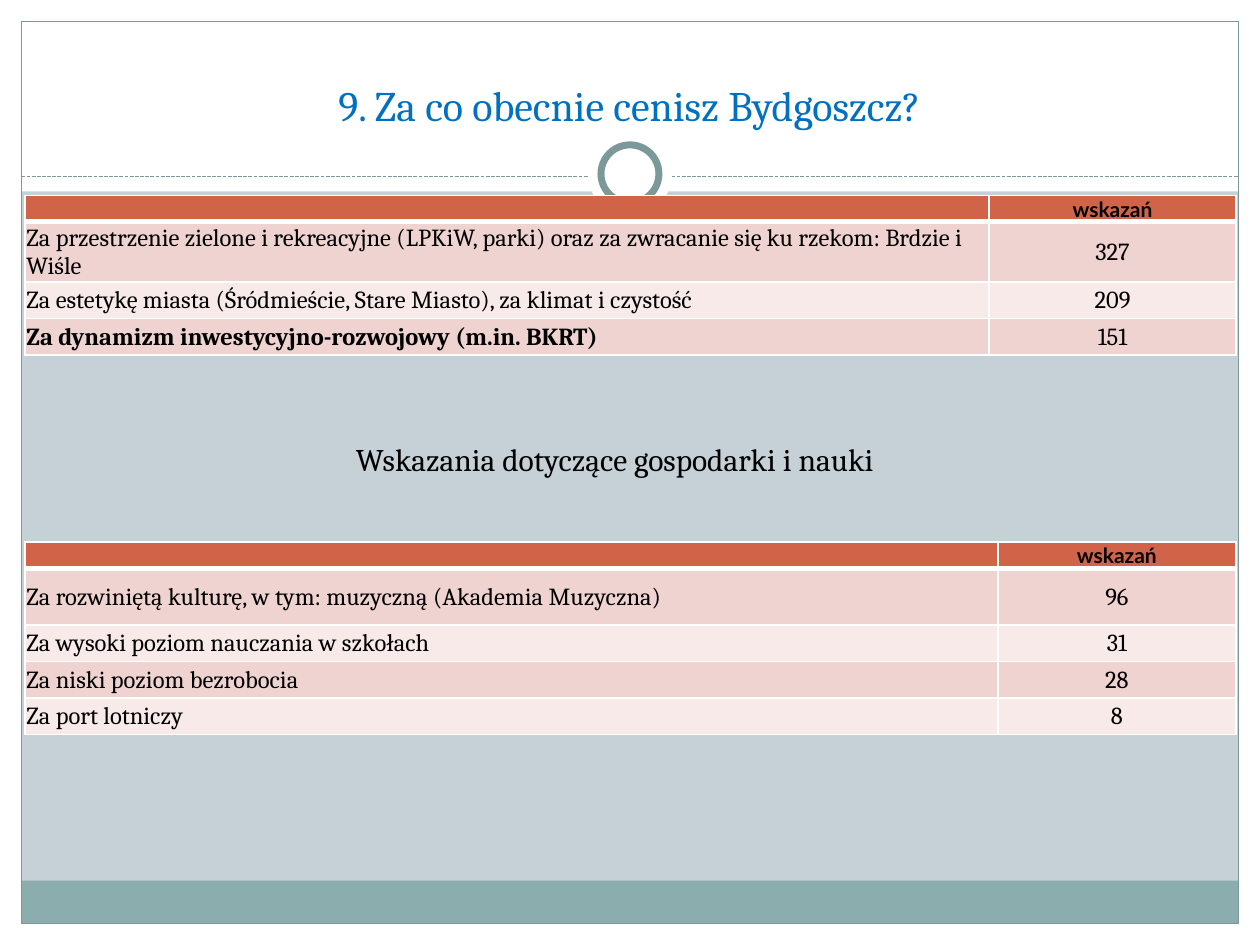
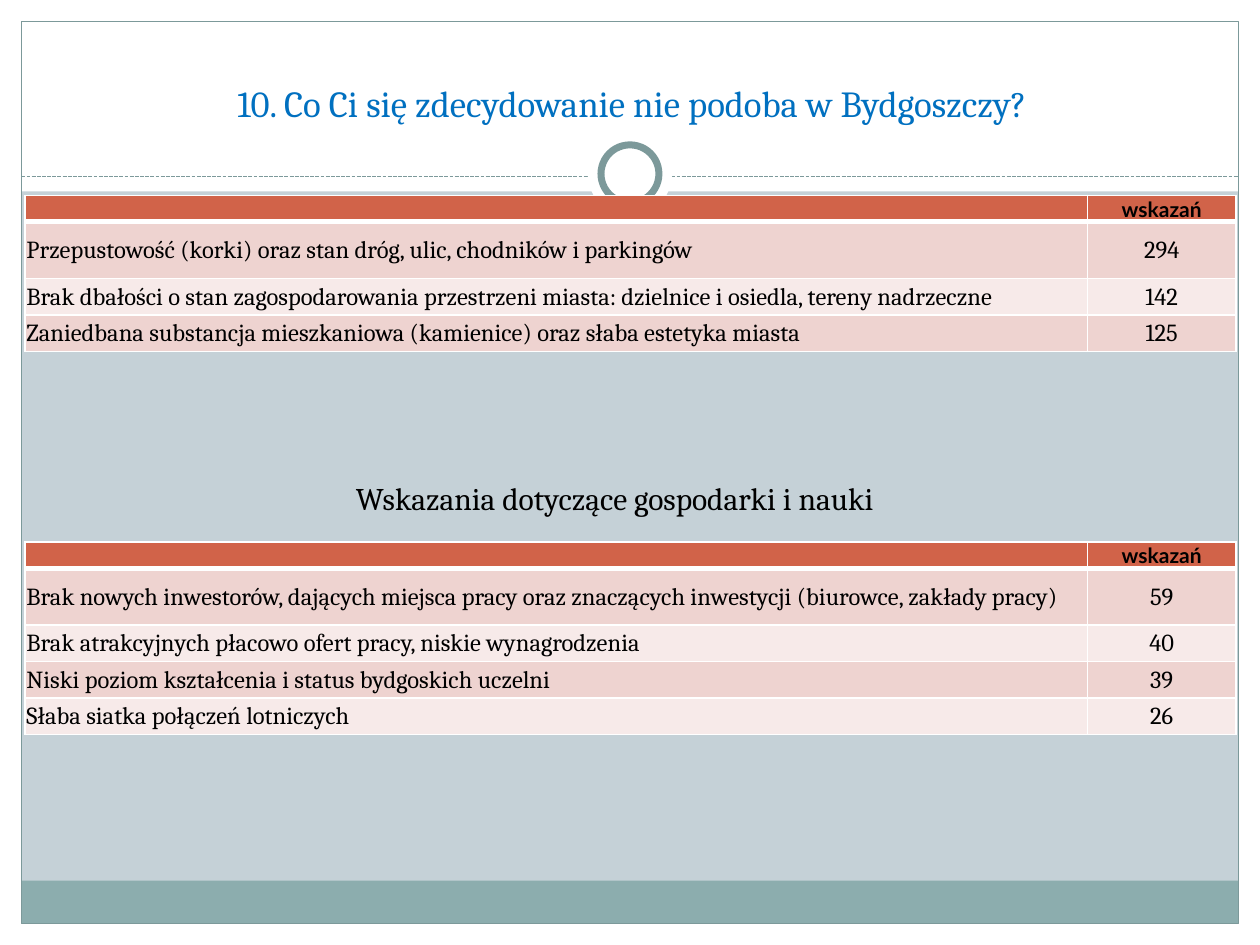
from dataclasses import dataclass

import pptx
import pptx.dml.color
import pptx.enum.dml
import pptx.enum.shapes
import pptx.enum.text
import pptx.oxml
import pptx.oxml.ns
import pptx.util
from pptx.shapes.autoshape import Shape
from pptx.slide import Slide
from pptx.table import _Cell

SHAPE = pptx.enum.shapes.MSO_SHAPE
ANCHOR = pptx.enum.text.MSO_ANCHOR
ALIGN = pptx.enum.text.PP_ALIGN

# The slide is a grid of 100 columns by 75 rows.
CELL = pptx.util.Inches(0.1)
COLUMNS, ROWS = 100, 75
MARGIN = 1.7
HEADER_BAND = 15.2
DIVIDER_ROW = 14
FOOTER_ROWS = 3.4
TABLE_LEFT, TABLE_WIDTH = 2, 96.1
HEADING_ROW, FIRST_ROW, OTHER_ROW = 2.1, 4.5, 2.9


@dataclass(frozen=True)
class Theme:
    background: str = "C5D1D7"
    paper: str = "FFFFFF"
    frame: str = "7C999A"
    footer: str = "8CADAE"
    title: str = "0070C0"
    text: str = "000000"
    heading_fill: str = "D16349"
    bands: tuple[str, str] = ("EED3D0", "F7EAE9")
    serif: str = "Cambria"
    sans: str = "Lato"
    caption_size: int = 18
    answer_size: int = 14
    heading_size: int = 12
    hairline: float = 0.75
    ring_line: float = 4
    cell_line: float = 1
    heading_line: float = 3


THEME = Theme()


@dataclass(frozen=True)
class Area:
    left: float
    top: float
    width: float
    height: float

    def lengths(self) -> tuple[int, ...]:
        return tuple(grid(n) for n in (self.left, self.top, self.width, self.height))


@dataclass(frozen=True)
class Decoration:
    area: Area
    kind: int = SHAPE.RECTANGLE
    fill: str | None = THEME.paper
    line_width: float = 0


@dataclass(frozen=True)
class Answer:
    label: str
    votes: int
    bold: bool = False


@dataclass(frozen=True)
class Ranking:
    top: float
    label_width: float
    answers: tuple[Answer, ...]


@dataclass(frozen=True)
class Question:
    title: str
    title_area: Area
    title_size: int
    caption_top: float
    rankings: tuple[Ranking, Ranking]


def circle(diameter: float, middle: float = 13.8) -> Area:
    return Area((COLUMNS - diameter) / 2, middle - diameter / 2, diameter, diameter)


INNER_WIDTH = COLUMNS - 2 * MARGIN
BANDS = (
    Decoration(Area(0, ROWS - MARGIN, COLUMNS, MARGIN)),
    Decoration(Area(0, 0, COLUMNS, HEADER_BAND)),
    Decoration(Area(0, 0, MARGIN, ROWS)),
    Decoration(Area(COLUMNS - MARGIN, 0, MARGIN, ROWS)),
    Decoration(Area(MARGIN, ROWS - MARGIN - FOOTER_ROWS, INNER_WIDTH, FOOTER_ROWS),
               fill=THEME.footer),
    Decoration(Area(MARGIN, MARGIN, INNER_WIDTH, ROWS - 2 * MARGIN),
               fill=None, line_width=THEME.hairline),
)
RINGS = (
    Decoration(circle(6.7), SHAPE.OVAL),
    Decoration(circle(4.6), SHAPE.OVAL, line_width=THEME.ring_line),
)

QUESTIONS = (
    Question(
        "9. Za co obecnie cenisz Bydgoszcz?", Area(3.3, 2.5, 93.3, 8.3), 24, 34.4,
        (
            Ranking(15.5, 76.5, (
                Answer("Za przestrzenie zielone i rekreacyjne (LPKiW, parki) "
                       "oraz za zwracanie się ku rzekom: Brdzie i Wiśle", 327),
                Answer("Za estetykę miasta (Śródmieście, Stare Miasto), "
                       "za klimat i czystość", 209),
                Answer("Za dynamizm inwestycyjno-rozwojowy (m.in. BKRT)", 151, bold=True),
            )),
            Ranking(43, 77.2, (
                Answer("Za rozwiniętą kulturę, w tym: muzyczną (Akademia Muzyczna)", 96),
                Answer("Za wysoki poziom nauczania w szkołach", 31),
                Answer("Za niski poziom bezrobocia", 28),
                Answer("Za port lotniczy", 8),
            )),
        ),
    ),
    Question(
        "10. Co Ci się zdecydowanie nie podoba w Bydgoszczy?",
        Area(2.3, 2.9, 95.7, 7.5), 21, 37.5,
        (
            Ranking(15.5, 84.3, (
                Answer("Przepustowość (korki) oraz stan dróg, ulic, "
                       "chodników i parkingów", 294),
                Answer("Brak dbałości o stan zagospodarowania przestrzeni miasta: "
                       "dzielnice i osiedla, tereny nadrzeczne", 142),
                Answer("Zaniedbana substancja mieszkaniowa (kamienice) "
                       "oraz słaba estetyka miasta", 125),
            )),
            Ranking(43, 84.3, (
                Answer("Brak nowych inwestorów, dających miejsca pracy oraz "
                       "znaczących inwestycji (biurowce, zakłady pracy)", 59),
                Answer("Brak atrakcyjnych płacowo ofert pracy, niskie wynagrodzenia", 40),
                Answer("Niski poziom kształcenia i status bydgoskich uczelni", 39),
                Answer("Słaba siatka połączeń lotniczych", 26),
            )),
        ),
    ),
)


def grid(count: float) -> int:
    return round(count * CELL)


def rgb(value: str) -> pptx.dml.color.RGBColor:
    return pptx.dml.color.RGBColor.from_string(value)


def decorate(slide: Slide, decoration: Decoration) -> None:
    shape = slide.shapes.add_shape(decoration.kind, *decoration.area.lengths())
    shape.shadow.inherit = False
    if decoration.fill:
        shape.fill.solid()
        shape.fill.fore_color.rgb = rgb(decoration.fill)
    else:
        shape.fill.background()
    if decoration.line_width:
        shape.line.color.rgb = rgb(THEME.frame)
        shape.line.width = pptx.util.Pt(decoration.line_width)
    else:
        shape.line.fill.background()


def add_divider(slide: Slide) -> None:
    divider = slide.shapes.add_connector(
        pptx.enum.shapes.MSO_CONNECTOR.STRAIGHT, grid(MARGIN), grid(DIVIDER_ROW),
        grid(COLUMNS - MARGIN), grid(DIVIDER_ROW))
    divider.line.color.rgb = rgb(THEME.frame)
    divider.line.width = pptx.util.Pt(THEME.hairline)
    divider.line.dash_style = pptx.enum.dml.MSO_LINE.SQUARE_DOT
    properties = divider._element.spPr
    properties.append(pptx.oxml.parse_xml(
        f"<a:effectLst {pptx.oxml.ns.nsdecls('a')}/>"))


def style_run(run, size: float, color: str, font: str = THEME.serif,
              bold: bool = False) -> None:
    run.font.size = pptx.util.Pt(size)
    run.font.name = font
    run.font.bold = bold
    run.font.color.rgb = rgb(color)


def add_centred_text(slide: Slide, text: str, area: Area, size: float,
                     color: str) -> Shape:
    box = slide.shapes.add_textbox(*area.lengths())
    box.text_frame.word_wrap = True
    box.text_frame.text = text
    paragraph = box.text_frame.paragraphs[0]
    paragraph.alignment = ALIGN.CENTER
    style_run(paragraph.runs[0], size, color)
    return box


def border_cell(cell: _Cell, top: float, bottom: float) -> None:
    """Rule all four sides; the borders must precede the fill in the XML."""
    widths = {"L": THEME.cell_line, "R": THEME.cell_line, "T": top, "B": bottom}
    properties = cell._tc.get_or_add_tcPr()
    for position, (side, width) in enumerate(widths.items()):
        properties.insert(position, pptx.oxml.parse_xml(
            f'<a:ln{side} {pptx.oxml.ns.nsdecls("a")} w="{pptx.util.Pt(width)}">'
            f'<a:solidFill><a:srgbClr val="{THEME.paper}"/></a:solidFill></a:ln{side}>'))


def fill_cell(cell: _Cell, text: str, fill: str, size: float, font: str,
              bold: bool, centred: bool) -> None:
    cell.fill.solid()
    cell.fill.fore_color.rgb = rgb(fill)
    cell.vertical_anchor = ANCHOR.MIDDLE
    cell.margin_left = cell.margin_right = cell.margin_top = pptx.util.Inches(0.01)
    cell.margin_bottom = 0
    paragraph = cell.text_frame.paragraphs[0]
    paragraph.alignment = ALIGN.CENTER if centred else ALIGN.LEFT
    if text:
        paragraph.text = text
        style_run(paragraph.runs[0], size, THEME.text, font, bold)
    else:  # an empty cell must not stretch its row
        paragraph._p.append(pptx.oxml.parse_xml(
            f'<a:endParaRPr {pptx.oxml.ns.nsdecls("a")} sz="{round(size * 100)}"/>'))


def add_ranking(slide: Slide, ranking: Ranking) -> None:
    others = len(ranking.answers) - 1
    heights = [HEADING_ROW, FIRST_ROW] + [OTHER_ROW] * others
    area = Area(TABLE_LEFT, ranking.top, TABLE_WIDTH, sum(heights))
    table = slide.shapes.add_table(len(heights), 2, *area.lengths()).table
    table.columns[0].width = grid(ranking.label_width)
    table.columns[1].width = grid(TABLE_WIDTH - ranking.label_width)
    for row, height in zip(table.rows, heights):
        row.height = grid(height)

    for column, heading in enumerate(("", "wskazań")):
        cell = table.cell(0, column)
        fill_cell(cell, heading, THEME.heading_fill, THEME.heading_size,
                  THEME.sans, bold=True, centred=True)
        border_cell(cell, THEME.cell_line, THEME.heading_line)
    for index, answer in enumerate(ranking.answers):
        values = ((answer.label, answer.bold), (str(answer.votes), False))
        for column, (text, bold) in enumerate(values):
            cell = table.cell(index + 1, column)
            fill_cell(cell, text, THEME.bands[index % 2], THEME.answer_size,
                      THEME.serif, bold, centred=column == 1)
            border_cell(cell, THEME.cell_line if index else THEME.heading_line,
                        THEME.cell_line)


def add_question(deck, question: Question) -> None:
    slide = deck.slides.add_slide(deck.slide_layouts[6])
    slide.background.fill.solid()
    slide.background.fill.fore_color.rgb = rgb(THEME.background)
    for band in BANDS:
        decorate(slide, band)
    add_divider(slide)
    for ring in RINGS:
        decorate(slide, ring)

    title = add_centred_text(slide, question.title, question.title_area,
                             question.title_size, THEME.title)
    title.text_frame.vertical_anchor = ANCHOR.BOTTOM
    caption = add_centred_text(
        slide, "Wskazania dotyczące gospodarki i nauki",
        Area(3.5, question.caption_top, 90.6, 4), THEME.caption_size, THEME.text)
    caption.text_frame.auto_size = pptx.enum.text.MSO_AUTO_SIZE.SHAPE_TO_FIT_TEXT
    for ranking in question.rankings:
        add_ranking(slide, ranking)


def main() -> None:
    deck = pptx.Presentation()
    deck.slide_width, deck.slide_height = grid(COLUMNS), grid(ROWS)
    for question in QUESTIONS:
        add_question(deck, question)
    deck.save("out.pptx")


if __name__ == "__main__":
    main()
